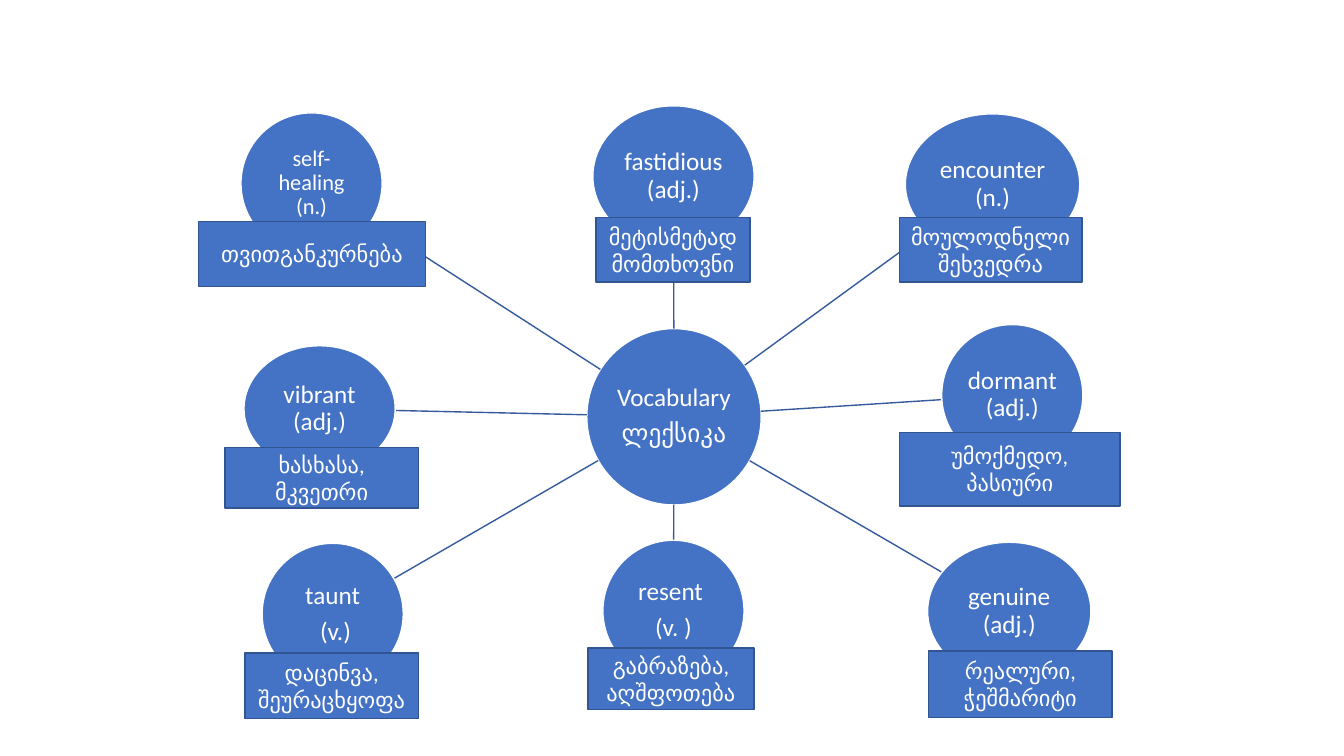
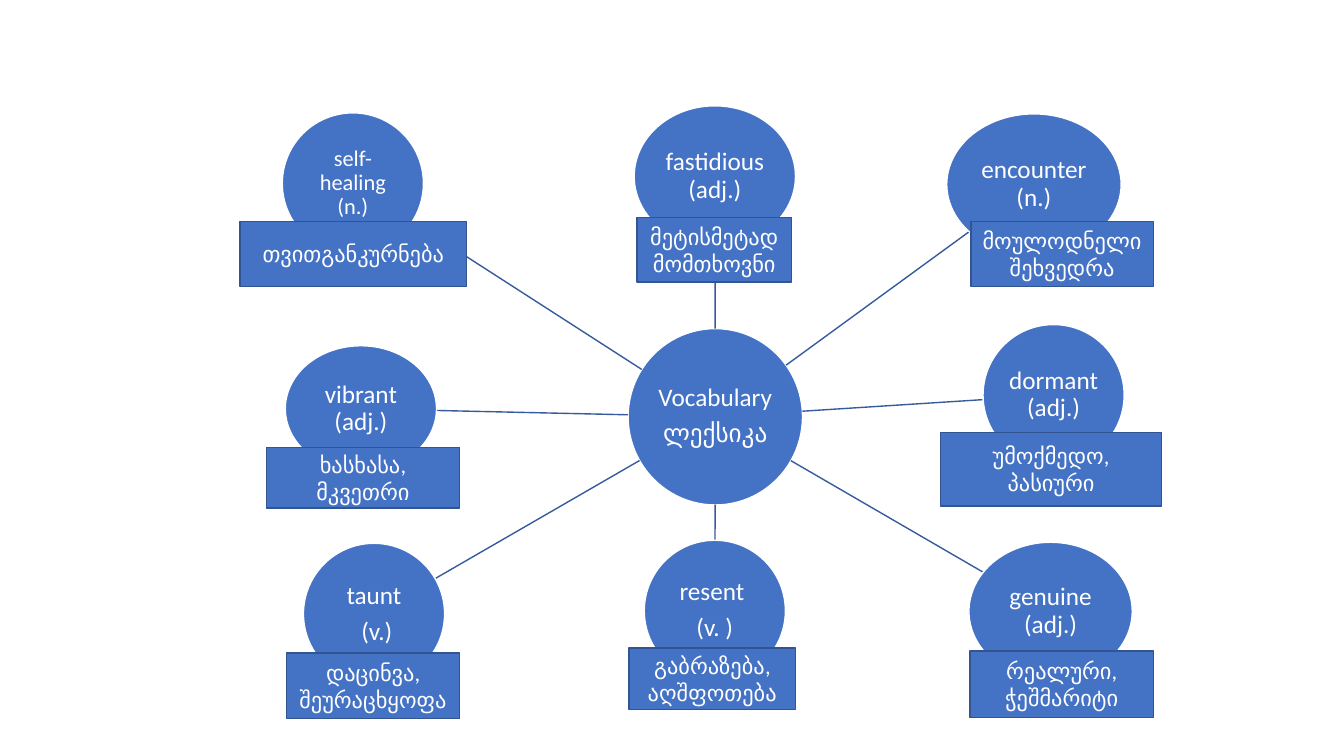
"""Build two vocabulary mind-map slides with English words and Georgian meanings."""
from math import hypot

from lxml.etree import SubElement
from pptx import Presentation
from pptx.dml.color import RGBColor
from pptx.enum.shapes import MSO_CONNECTOR, MSO_SHAPE
from pptx.enum.text import MSO_ANCHOR, PP_ALIGN
from pptx.oxml.ns import qn
from pptx.util import Inches, Pt

SLIDE_SIZE = (13.33, 7.5)
FONT = "Calibri"
BLUE, WHITE, BOX_EDGE, SPOKE = "4472C4", "FFFFFF", "325491", "365B9D"

HUB = (["Vocabulary", "ლექსიკა"], (5.82, 3.26, 1.73, 1.75))
WORDS = {
    "fastidious": (["fastidious (adj.)"], 18, (5.88, 1.05, 1.6, 1.4)),
    "encounter": (["encounter (n.)"], 18, (8.98, 1.13, 1.73, 1.4)),
    "dormant": (["dormant (adj.)"], 18, (9.34, 3.22, 1.4, 1.4)),
    "genuine": (["genuine (adj.)"], 18, (9.2, 5.38, 1.62, 1.37)),
    "resent": (["resent ", "(v. )"], 18, (5.98, 5.36, 1.4, 1.4)),
    "taunt": (["taunt", " (v.)"], 18, (2.6, 5.39, 1.4, 1.4)),
    "vibrant": (["vibrant (adj.)"], 18, (2.42, 3.43, 1.5, 1.25)),
    "self-healing": (["self-healing (n.)"], 16, (2.39, 1.12, 1.4, 1.4)),
}
MEANINGS = {
    "fastidious": ("მეტისმეტად მომთხოვნი", (5.91, 2.16, 1.53, 0.64)),
    "encounter": ("მოულოდნელი შეხვედრა", (8.92, 2.16, 1.81, 0.64)),
    "dormant": ("უმოქმედო, პასიური", (8.92, 4.29, 2.19, 0.73)),
    "genuine": ("რეალური, ჭეშმარიტი", (9.21, 6.46, 1.82, 0.66)),
    "resent": ("გაბრაზება, აღშფოთება", (5.83, 6.43, 1.65, 0.61)),
    "taunt": ("დაცინვა, შეურაცხყოფა", (2.43, 6.48, 1.72, 0.65)),
    "vibrant": ("ხასხასა, მკვეთრი", (2.23, 4.44, 1.92, 0.6)),
    "self-healing": ("თვითგანკურნება", (1.97, 2.2, 2.25, 0.64)),
}
SLIDES = [
    {"shift": 0, "moved": {}},
    {"shift": 0.41, "moved": {"encounter": (0.3, 0.04)}},
]


def color(value):
    return RGBColor.from_string(value)


def offset(area, right, down=0):
    left, top, width, height = area
    return left + right, top + down, width, height


def write(shape, lines, size=16, inset=None, line_spacing=None, space_after=0):
    frame = shape.text_frame
    frame.word_wrap = True
    frame.vertical_anchor = MSO_ANCHOR.MIDDLE
    if inset is not None:
        frame.margin_left = frame.margin_right = Inches(inset)
        frame.margin_top = frame.margin_bottom = Inches(inset)
    for index, line in enumerate(lines):
        paragraph = frame.paragraphs[0] if index == 0 else frame.add_paragraph()
        paragraph.text = line
        paragraph.alignment = PP_ALIGN.CENTER
        paragraph.line_spacing = line_spacing
        paragraph.space_after = Pt(size * space_after)
        font = paragraph.font
        font.name, font.size = FONT, Pt(size)
        font.color.rgb = color(WHITE)


def add_panel(slide, kind, area, edge):
    shape = slide.shapes.add_shape(kind, *map(Inches, area))
    shape.shadow.inherit = False
    shape.fill.solid()
    shape.fill.fore_color.rgb = color(BLUE)
    shape.line.color.rgb = color(edge)
    shape.line.width = Pt(1)
    return shape


def add_bubble(slide, area, lines, size):
    bubble = add_panel(slide, MSO_SHAPE.OVAL, area, WHITE)
    write(bubble, lines, size=size, inset=0.01, line_spacing=0.9, space_after=0.35)


def center(area):
    left, top, width, height = area
    return left + width / 2, top + height / 2


def rim_point(area, target):
    """Return where the line from an ellipse's center to the target leaves it."""
    x, y = center(area)
    across, down = target[0] - x, target[1] - y
    reach = hypot(across / (area[2] / 2), down / (area[3] / 2))
    return x + across / reach, y + down / reach


def add_spoke(slide, hub, bubble):
    ends = rim_point(hub, center(bubble)) + rim_point(bubble, center(hub))
    spoke = slide.shapes.add_connector(MSO_CONNECTOR.STRAIGHT, *map(Inches, ends))
    spoke.line.color.rgb = color(SPOKE)
    spoke.line.width = Pt(1)
    SubElement(spoke.element.spPr, qn("a:effectLst"))


def add_map(presentation, shift, moved):
    slide = presentation.slides.add_slide(presentation.slide_layouts[6])
    hub_lines, hub_area = HUB
    hub = offset(hub_area, shift)
    add_bubble(slide, hub, hub_lines, 18)
    for lines, size, area in WORDS.values():
        bubble = offset(area, shift)
        add_spoke(slide, hub, bubble)
        add_bubble(slide, bubble, lines, size)
    for word, (meaning, area) in MEANINGS.items():
        right, down = moved.get(word, (0, 0))
        place = offset(area, shift + right, down)
        write(add_panel(slide, MSO_SHAPE.RECTANGLE, place, BOX_EDGE), [meaning])


def main():
    presentation = Presentation()
    presentation.slide_width, presentation.slide_height = map(Inches, SLIDE_SIZE)
    for settings in SLIDES:
        add_map(presentation, **settings)
    presentation.save("out.pptx")


if __name__ == "__main__":
    main()
